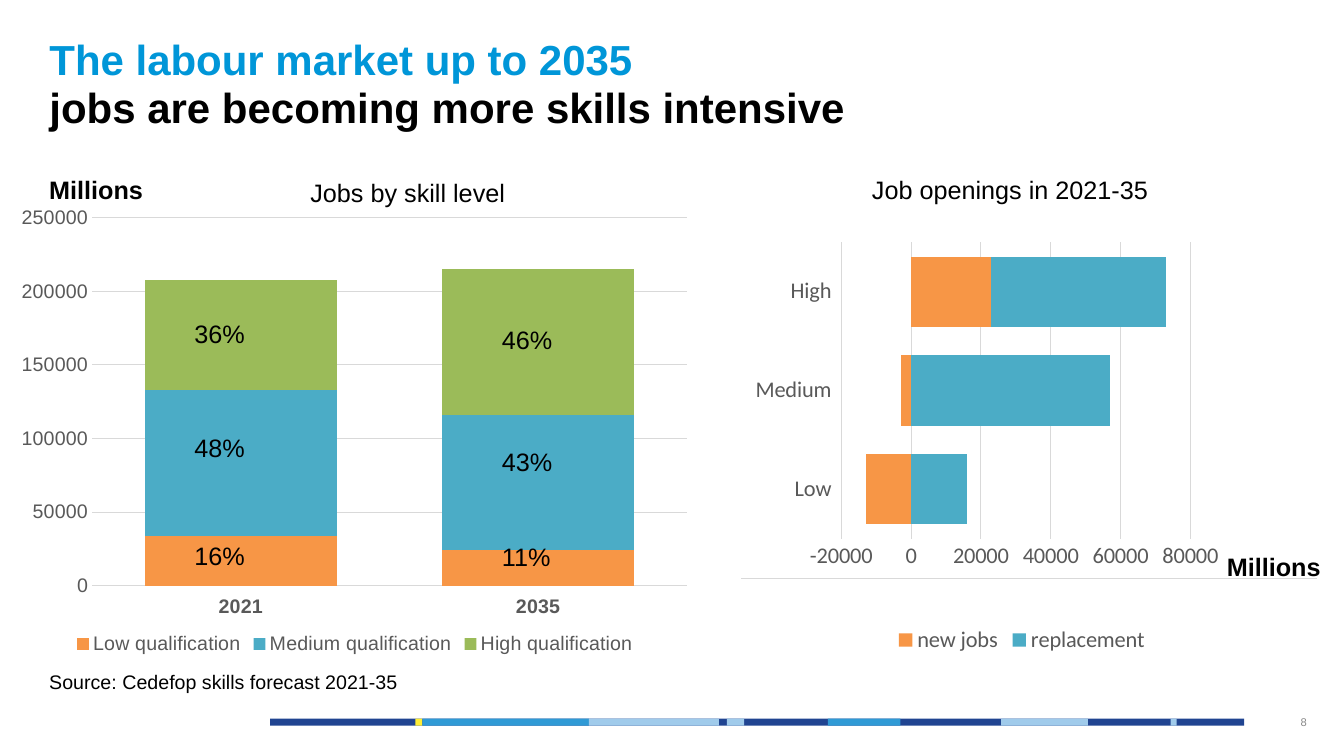
from lxml.etree import SubElement
from pptx import Presentation
from pptx.chart.data import CategoryChartData
from pptx.dml.color import RGBColor
from pptx.enum.chart import (XL_CHART_TYPE as ChartType, XL_LEGEND_POSITION as LegendPosition,
                             XL_TICK_LABEL_POSITION as LabelPosition, XL_TICK_MARK as TickMark)
from pptx.enum.shapes import MSO_CONNECTOR as Connector, MSO_SHAPE as Shape
from pptx.enum.text import MSO_ANCHOR as Anchor, PP_ALIGN as Align
from pptx.oxml import parse_xml
from pptx.oxml.ns import nsdecls, qn
from pptx.util import Emu, Pt

EMU_PER_PX = 9144

BLACK = RGBColor(0x00, 0x00, 0x00)
TITLE_BLUE = RGBColor(0x00, 0x96, 0xD8)
NAVY = RGBColor(0x20, 0x44, 0x91)
YELLOW = RGBColor(0xFF, 0xEE, 0x35)
SKY = RGBColor(0x30, 0x9A, 0xD5)
PALE_BLUE = RGBColor(0xA0, 0xCB, 0xEB)
ORANGE = RGBColor(0xF7, 0x96, 0x46)
TEAL = RGBColor(0x4B, 0xAC, 0xC6)
GREEN = RGBColor(0x9B, 0xBB, 0x59)
AXIS_GREY = RGBColor(0x59, 0x59, 0x59)
GRID_GREY = RGBColor(0xD9, 0xD9, 0xD9)
PAGE_GREY = RGBColor(0x89, 0x89, 0x89)

STRIPES = [(268, 966, NAVY), (412, 7, YELLOW), (419, 165, SKY), (584, 129, PALE_BLUE),
           (721, 17, PALE_BLUE), (821, 72, SKY), (993, 86, PALE_BLUE), (1161, 6, PALE_BLUE)]
SKILL_LEVELS = [("Low qualification", (34000, 24000), ORANGE),
                ("Medium qualification", (99000, 92000), TEAL),
                ("High qualification", (75000, 99000), GREEN)]
OPENINGS = [("new jobs", (-13000, -3000, 23000), ORANGE),
            ("replacement", (16000, 57000, 50000), TEAL)]
SHARES = [(183, [("36%", 311), ("48%", 424), ("16%", 531)]),
          (488, [("46%", 317), ("43%", 438), ("11%", 532)])]


def px(*lengths):
    return [Emu(length * EMU_PER_PX) for length in lengths]


def set_font(font, size, color, name="Arial", bold=False):
    font.size = Pt(size)
    font.color.rgb = color
    font.name = name
    font.bold = bold


def add_title(slide, lines):
    title = slide.shapes.title
    title.left, title.top, title.width, title.height = px(39, 31, 1246, 105)
    frame = title.text_frame
    frame.vertical_anchor = Anchor.TOP
    frame.text = "\n".join(text for text, color in lines)
    for paragraph, (text, color) in zip(frame.paragraphs, lines):
        paragraph.alignment = Align.LEFT
        paragraph.line_spacing = Pt(34)
        set_font(paragraph.font, 30, color, bold=True)


def add_label(slide, text, left, top, width, height=40, size=18, color=BLACK,
              bold=False, wrap=False, align=Align.LEFT, anchor=Anchor.TOP):
    frame = slide.shapes.add_textbox(*px(left, top, width, height)).text_frame
    frame.word_wrap = wrap
    frame.vertical_anchor = anchor
    paragraph = frame.paragraphs[0]
    paragraph.text = text
    paragraph.alignment = align
    set_font(paragraph.font, size, color, bold=bold)


def add_stripe(slide, left, width, color):
    stripe = slide.shapes.add_shape(Shape.RECTANGLE, *px(left, 713, width, 7))
    stripe.shadow.inherit = False
    stripe.fill.solid()
    stripe.fill.fore_color.rgb = color
    stripe.line.fill.background()


def add_rule(slide, left, right, y):
    rule = slide.shapes.add_connector(Connector.STRAIGHT, *px(left, y, right, y))
    rule.line.color.rgb = GRID_GREY
    rule.line.width = Pt(0.75)
    SubElement(rule.element.spPr, qn("a:effectLst"))


def place_plot(chart, x, y, width, height):
    plot_area = chart.element.find(".//" + qn("c:plotArea"))
    layout = plot_area.find(qn("c:layout"))
    if layout is not None:
        plot_area.remove(layout)
    plot_area.insert(0, parse_xml(
        f'<c:layout {nsdecls("c")}><c:manualLayout><c:layoutTarget val="inner"/>'
        f'<c:xMode val="edge"/><c:yMode val="edge"/><c:x val="{x}"/><c:y val="{y}"/>'
        f'<c:w val="{width}"/><c:h val="{height}"/></c:manualLayout></c:layout>'))


def style_axis(axis, size, font_name, bold=False):
    axis.major_tick_mark = axis.minor_tick_mark = TickMark.NONE
    set_font(axis.tick_labels.font, size, AXIS_GREY, font_name, bold)


def add_stacked_chart(slide, kind, box, plot_box, categories, series_rows, scale,
                      gap, size, font_name, bold_categories=False):
    data = CategoryChartData(number_format="General")
    data.categories = categories
    for name, values, color in series_rows:
        data.add_series(name, values)
    chart = slide.shapes.add_chart(kind, *px(*box), data).chart
    set_font(chart.font, size, BLACK, font_name)
    chart.has_title = False
    chart.has_legend = True
    chart.legend.position = LegendPosition.BOTTOM
    chart.legend.include_in_layout = False
    set_font(chart.legend.font, size, AXIS_GREY, font_name)

    plot = chart.plots[0]
    plot.gap_width = gap
    plot.overlap = 100
    plot.vary_by_categories = False
    for series, (name, values, color) in zip(plot.series, series_rows):
        series.invert_if_negative = False
        series.format.fill.solid()
        series.format.fill.fore_color.rgb = color

    category_axis, value_axis = chart.category_axis, chart.value_axis
    style_axis(category_axis, size, font_name, bold_categories)
    category_axis.tick_label_position = LabelPosition.LOW
    style_axis(value_axis, size, font_name)
    value_axis.minimum_scale, value_axis.maximum_scale, value_axis.major_unit = scale
    value_axis.format.line.fill.background()
    for line in (category_axis.format.line, value_axis.major_gridlines.format.line):
        line.color.rgb = GRID_GREY
        line.width = Pt(0.75)
    place_plot(chart, *plot_box)


def main():
    presentation = Presentation()
    presentation.slide_width, presentation.slide_height = px(1333, 750)
    slide = presentation.slides.add_slide(presentation.slide_layouts[5])

    for left, width, color in STRIPES:
        add_stripe(slide, left, width, color)
    add_title(slide, [("The labour market up to 2035", TITLE_BLUE),
                      ("jobs are becoming more skills intensive", BLACK)])

    add_stacked_chart(slide, ChartType.COLUMN_STACKED, (9, 198, 686, 456),
                      (0.12, 0.04, 0.86, 0.8), ["2021", "2035"], SKILL_LEVELS,
                      (0, 250000, 50000), 55, 14, "Arial", bold_categories=True)
    add_stacked_chart(slide, ChartType.BAR_STACKED, (715, 214, 597, 439),
                      (0.2, 0.06, 0.58, 0.67), ["Low", "Medium", "High"], OPENINGS,
                      (-20000, 80000, 20000), 41, 16, "Calibri")
    add_rule(slide, 735, 1306, 574)

    add_label(slide, "Jobs by skill level", 298, 171, 215)
    add_label(slide, "Job openings in 2021-35", 855, 168, 303)
    for left, top in ((39, 168), (1207, 542)):
        add_label(slide, "Millions", left, top, 114, bold=True)
    for left, shares in SHARES:
        for share, top in shares:
            add_label(slide, share, left, top, 71)
    add_label(slide, "Source: Cedefop skills forecast 2021-35", 39, 660, 810, 34,
              size=14, wrap=True)
    add_label(slide, "8", 1223, 696, 83, size=8, color=PAGE_GREY, wrap=True,
              align=Align.RIGHT, anchor=Anchor.MIDDLE)

    presentation.save("out.pptx")


if __name__ == "__main__":
    main()
